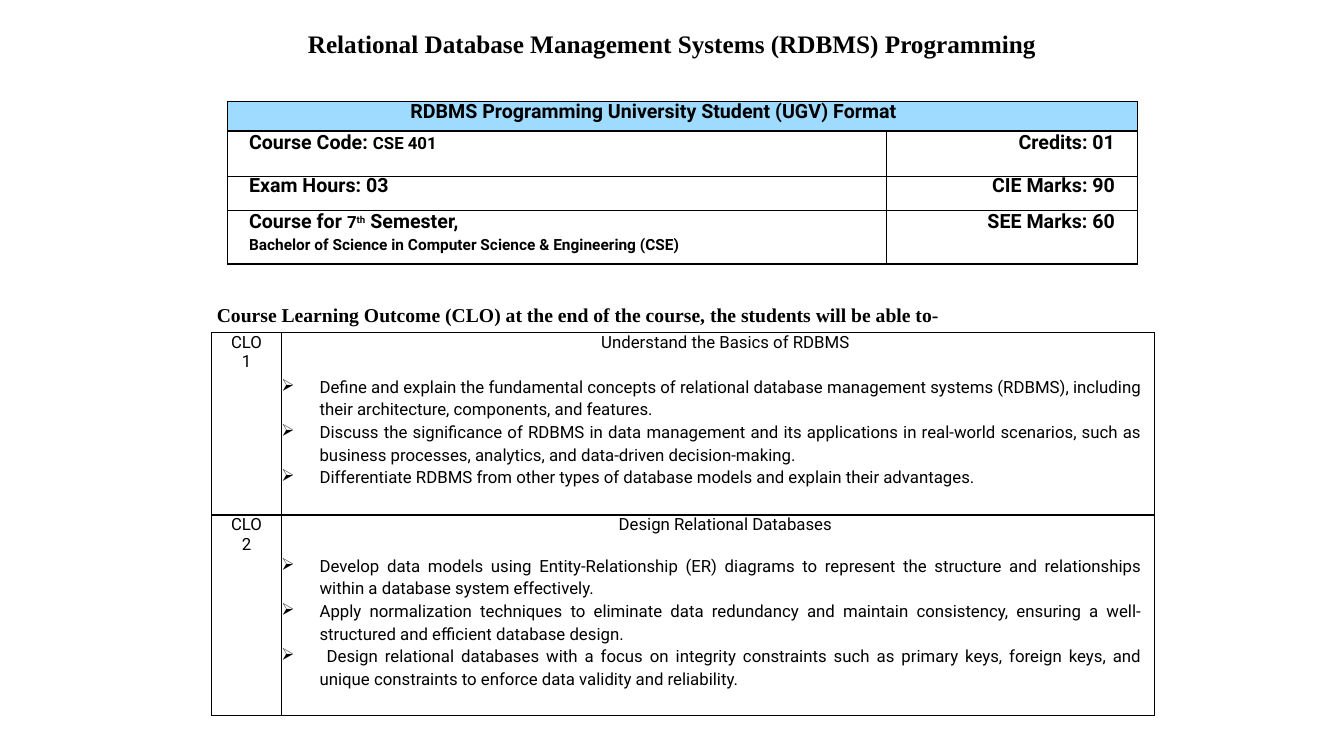
"""Build the RDBMS course outline slide with its course facts and learning outcomes."""
from dataclasses import dataclass
from typing import Optional, Union

from lxml.etree import SubElement
from pptx import Presentation
from pptx.dml.color import RGBColor
from pptx.enum.text import MSO_ANCHOR, MSO_AUTO_SIZE, PP_ALIGN
from pptx.oxml.ns import qn
from pptx.util import Inches, Pt


@dataclass(frozen=True)
class Theme:
    ink: str = "000000"
    banner: str = "9EDBFF"
    serif: str = "Times New Roman"
    sans: str = "Roboto"
    title: float = 18
    heading: float = 14
    body: float = 12
    small: float = 11
    rule: float = 1


THEME = Theme()


@dataclass(frozen=True)
class Phrase:
    text: str
    size: float = THEME.heading
    raised: bool = False


@dataclass(frozen=True)
class Line:
    phrases: tuple[Phrase, ...]
    align: PP_ALIGN = PP_ALIGN.LEFT
    left: float = 0
    hanging: float = 0
    spacing: Optional[Union[float, Pt]] = None
    before: float = 0
    bold: bool = False
    bullet: str = ""
    font: str = THEME.sans


@dataclass(frozen=True)
class Margins:
    left: float = 0
    right: float = 0


@dataclass(frozen=True)
class Outcome:
    label: str
    topic: str
    gap: float
    goals: tuple[str, ...]


def fact(*phrases: Phrase, spacing: Optional[Pt] = None, left: float = 0.14, before: float = 0) -> Line:
    return Line(phrases, left=left, spacing=spacing, before=before, bold=True)


def mark(text: str, spacing: Optional[Pt] = None) -> Line:
    return Line((Phrase(text),), PP_ALIGN.RIGHT, spacing=spacing, left=0.07, bold=True)


BANNER = fact(Phrase("RDBMS Programming University Student (UGV) Format"), spacing=Pt(15.6), left=1.74)
FACTS = (
    ((fact(Phrase("Course Code: "), Phrase("CSE 401", THEME.body)),), mark("Credits: 01")),
    ((fact(Phrase("Exam Hours: 03"), spacing=Pt(15.1)),), mark("CIE Marks: 90", Pt(15.1))),
    (
        (
            fact(Phrase("Course for "), Phrase("7", THEME.body), Phrase("th", THEME.body, True),
                 Phrase(" Semester,"), spacing=Pt(16.1)),
            fact(Phrase("Bachelor of Science in Computer Science & Engineering (CSE)", THEME.small),
                 spacing=Pt(15.1), before=0.1),
        ),
        mark("SEE Marks: 60", Pt(16.1)),
    ),
)
OUTCOMES = (
    Outcome("CLO1", "Understand the Basics of RDBMS", 16, (
        "Define and explain the fundamental concepts of relational database management systems (RDBMS), including their architecture, components, and features.",
        "Discuss the significance of RDBMS in data management and its applications in real-world scenarios, such as business processes, analytics, and data-driven decision-making.",
        "Differentiate RDBMS from other types of database models and explain their advantages.",
    )),
    Outcome("CLO2", "Design Relational Databases", 13.5, (
        "Develop data models using Entity-Relationship (ER) diagrams to represent the structure and relationships within a database system effectively.",
        "Apply normalization techniques to eliminate data redundancy and maintain consistency, ensuring a well-structured and efficient database design.",
        " Design relational databases with a focus on integrity constraints such as primary keys, foreign keys, and unique constraints to enforce data validity and reliability.",
    )),
)


def write_lines(frame, lines: tuple[Line, ...]) -> None:
    for index, line in enumerate(lines):
        paragraph = frame.paragraphs[0] if index == 0 else frame.add_paragraph()
        paragraph.alignment = line.align
        paragraph.line_spacing = line.spacing
        if line.before:
            paragraph.space_before = Pt(line.before)
        properties = paragraph._p.get_or_add_pPr()
        properties.set("marL", str(Inches(line.left)))
        properties.set("indent", str(Inches(-line.hanging)))
        if line.bullet:
            SubElement(properties, qn("a:buChar"), char=line.bullet)
        paragraph.font.name = line.font
        paragraph.font.bold = line.bold
        paragraph.font.color.rgb = RGBColor.from_string(THEME.ink)
        mixed = len({phrase.size for phrase in line.phrases}) > 1
        if not mixed:
            paragraph.font.size = Pt(line.phrases[0].size)
        for phrase in line.phrases:
            run = paragraph.add_run()
            run.text = phrase.text
            if mixed:
                run.font.size = Pt(phrase.size)
            if phrase.raised:
                run._r.get_or_add_rPr().set("baseline", "30000")


def fill_cell(cell, lines: tuple[Line, ...], margins: Margins, fill: str = "") -> None:
    cell.margin_left, cell.margin_right = Inches(margins.left), Inches(margins.right)
    cell.margin_top = cell.margin_bottom = 0
    properties = cell._tc.get_or_add_tcPr()
    for side in "LRTB":
        border = SubElement(properties, qn(f"a:ln{side}"), w=str(Pt(THEME.rule)))
        SubElement(SubElement(border, qn("a:solidFill")), qn("a:srgbClr"), val=THEME.ink)
    if fill:
        cell.fill.solid()
        cell.fill.fore_color.rgb = RGBColor.from_string(fill)
    else:
        cell.fill.background()
    write_lines(cell.text_frame, lines)


def add_grid(slide, left: float, top: float, widths: tuple[float, ...], heights: tuple[float, ...]):
    table = slide.shapes.add_table(len(heights), len(widths), Inches(left), Inches(top),
                                   Inches(sum(widths)), Inches(sum(heights))).table
    table.first_row = table.horz_banding = False
    for column, width in zip(table.columns, widths):
        column.width = Inches(width)
    for row, height in zip(table.rows, heights):
        row.height = Inches(height)
    return table


def add_title(slide) -> None:
    title = slide.shapes.title
    title.left, title.top, title.width, title.height = map(Inches, (1.9, 0.23, 9.53, 0.4))
    frame = title.text_frame
    frame.vertical_anchor = MSO_ANCHOR.TOP
    frame.auto_size = MSO_AUTO_SIZE.SHAPE_TO_FIT_TEXT
    write_lines(frame, (Line((Phrase("Relational Database Management Systems (RDBMS) Programming", THEME.title),),
                             PP_ALIGN.CENTER, spacing=1.0, bold=True, font=THEME.serif),))


def add_facts(slide) -> None:
    table = add_grid(slide, 2.26, 1.01, (6.53, 2.49), (0.29, 0.45, 0.34, 0.53))
    margins = Margins(0.07, 0.07)
    table.cell(0, 0).merge(table.cell(0, 1))
    fill_cell(table.cell(0, 0), (BANNER,), margins, THEME.banner)
    fill_cell(table.cell(0, 1), (), margins, THEME.banner)
    for row, (details, marks) in enumerate(FACTS, start=1):
        fill_cell(table.cell(row, 0), details, margins)
        fill_cell(table.cell(row, 1), (marks,), Margins(0.07, 0.22))


def add_outcomes(slide) -> None:
    heading = slide.shapes.add_textbox(*map(Inches, (1.88, 2.95, 7.59, 0.3))).text_frame
    heading.word_wrap = True
    heading.margin_left, heading.margin_top = Inches(0.27), Inches(0.06)
    heading.margin_right = heading.margin_bottom = 0
    write_lines(heading, (Line((Phrase(
        "Course Learning Outcome (CLO) at the end of the course, the students will be able to-"),),
        bold=True, font=THEME.serif),))
    table = add_grid(slide, 2.1, 3.3, (0.69, 8.66), (1.81, 1.99))
    for row, outcome in enumerate(OUTCOMES):
        label = Line((Phrase(outcome.label, THEME.body),), PP_ALIGN.CENTER)
        topic = Line((Phrase(outcome.topic, THEME.body),), PP_ALIGN.CENTER, left=0.27)
        goals = tuple(
            Line((Phrase(goal, THEME.body),), PP_ALIGN.JUSTIFY, 0.38, 0.38, 1.15,
                 0 if index else outcome.gap, bullet="➢")
            for index, goal in enumerate(outcome.goals))
        fill_cell(table.cell(row, 0), (label,), Margins(0.17, 0.17))
        fill_cell(table.cell(row, 1), (topic, *goals), Margins(right=0.12))


def main() -> None:
    deck = Presentation()
    deck.slide_width, deck.slide_height = Inches(13.33), Inches(7.5)
    slide = deck.slides.add_slide(deck.slide_layouts[5])
    add_title(slide)
    add_facts(slide)
    add_outcomes(slide)
    deck.save("out.pptx")


if __name__ == "__main__":
    main()
